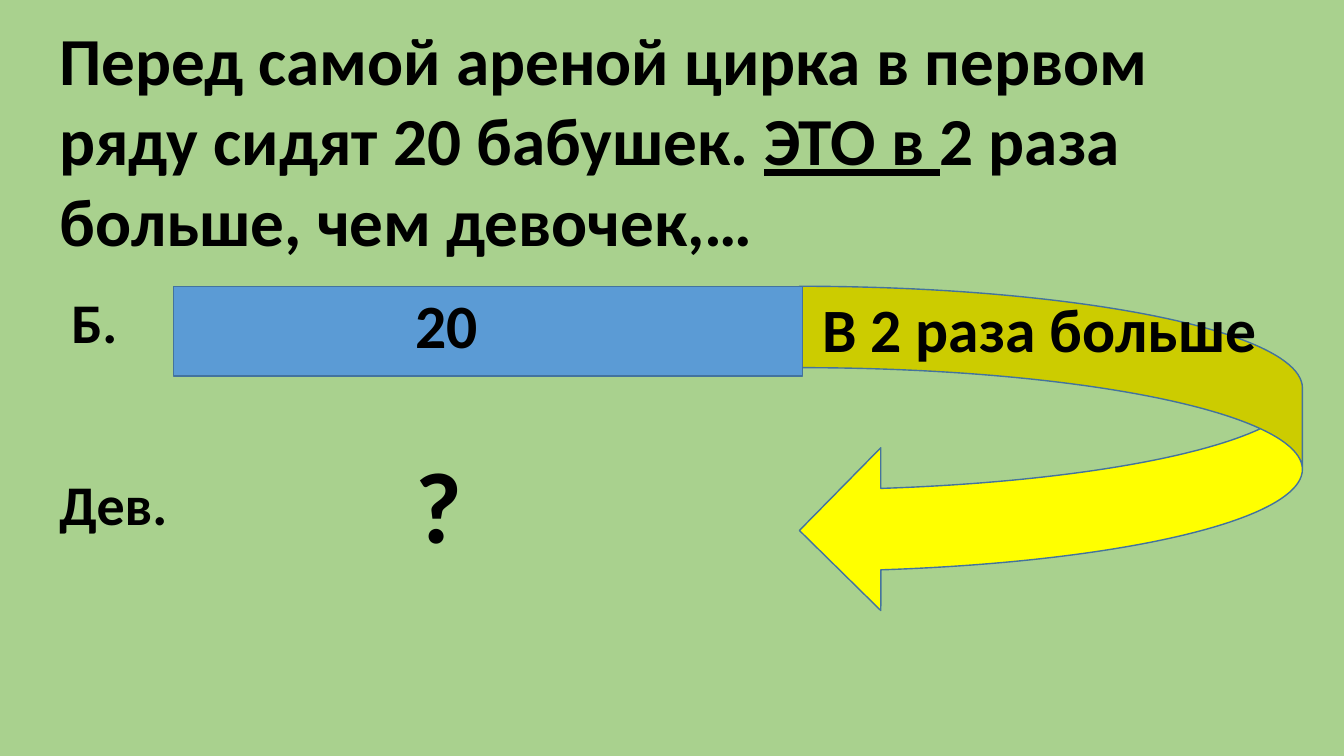
from dataclasses import dataclass

import pptx
import pptx.dml.color
import pptx.enum.shapes
import pptx.enum.text
import pptx.shapes.autoshape
import pptx.slide
import pptx.util

Pt = pptx.util.Pt
RGBColor = pptx.dml.color.RGBColor
Kind = pptx.enum.shapes.MSO_SHAPE

GREEN = RGBColor(0xA9, 0xD1, 0x8E)
BLUE = RGBColor(0x5B, 0x9B, 0xD5)
NAVY = RGBColor(0x43, 0x73, 0x9E)
YELLOW = RGBColor(0xFF, 0xFF, 0x00)
BLACK = RGBColor(0x00, 0x00, 0x00)


@dataclass(frozen=True)
class Box:
    left: float
    top: float
    width: float
    height: float


@dataclass(frozen=True)
class Form:
    kind: Kind
    box: Box
    fill: RGBColor


@dataclass(frozen=True)
class Label:
    text: str
    box: Box
    size: float


ROW = 204.5
FORMS = [
    Form(Kind.CURVED_LEFT_ARROW, Box(571, ROW, 359.3, 232.6), YELLOW),
    Form(Kind.RECTANGLE, Box(123.8, ROW, 449.3, 64.1), BLUE),
]
TASK = Label("Перед самой ареной цирка в первом ряду сидят 20 бабушек. ",
             Box(35.3, 9.4, 889.9, 181.4), 48)
LABELS = [
    Label("В 2 раза больше", Box(580.3, ROW, 344.2, 60.5), 44),
    Label("20", Box(289.4, 201.6, 72, 60.5), 44),
    Label("Б.", Box(43.9, 201.6, 67, 55.4), 40),
    Label("Дев.", Box(35.3, 331.9, 94.3, 55.4), 40),
    Label("?", Box(289.4, 312.5, 56.2, 94.3), 72),
]


def place(box: Box) -> list[pptx.util.Length]:
    return [Pt(n) for n in (box.left, box.top, box.width, box.height)]


def draw_form(slide: pptx.slide.Slide, form: Form) -> None:
    shape = slide.shapes.add_shape(form.kind, *place(form.box))
    shape.shadow.inherit = False
    shape.fill.solid()
    shape.fill.fore_color.rgb = form.fill
    shape.line.color.rgb = NAVY
    shape.line.width = Pt(1)


def draw_label(slide: pptx.slide.Slide,
               label: Label) -> pptx.shapes.autoshape.Shape:
    shape = slide.shapes.add_textbox(*place(label.box))
    frame = shape.text_frame
    frame.word_wrap = True
    frame.auto_size = pptx.enum.text.MSO_AUTO_SIZE.SHAPE_TO_FIT_TEXT
    frame.text = label.text
    style(frame.paragraphs[0].runs[0], label.size)
    return shape


def style(run, size: float, under: bool = False) -> None:
    run.font.name = "Calibri"
    run.font.size = Pt(size)
    run.font.bold = True
    run.font.underline = under
    run.font.color.rgb = BLACK


def draw_task(slide: pptx.slide.Slide) -> None:
    line = draw_label(slide, TASK).text_frame.paragraphs[0]
    for text, under in (("ЭТО в ", True),
                        ("2 раза больше, чем девочек,…", False)):
        run = line.add_run()
        run.text = text
        style(run, TASK.size, under)


def main() -> None:
    deck = pptx.Presentation()
    deck.slide_width, deck.slide_height = Pt(960), Pt(540)
    slide = deck.slides.add_slide(deck.slide_layouts[6])
    slide.background.fill.solid()
    slide.background.fill.fore_color.rgb = GREEN
    for form in FORMS:
        draw_form(slide, form)
    draw_task(slide)
    for label in LABELS:
        draw_label(slide, label)
    deck.save("out.pptx")


if __name__ == "__main__":
    main()
